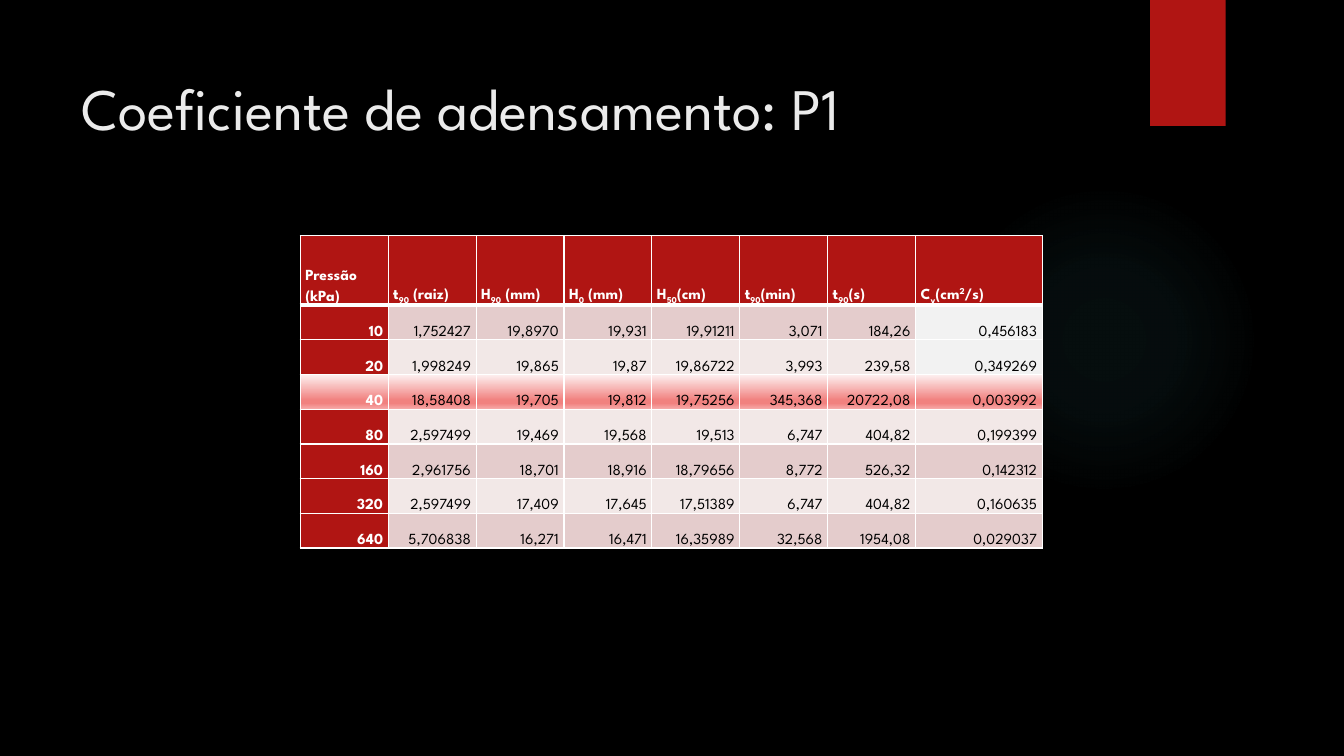
import dataclasses

import lxml.etree
import pptx
import pptx.dml.color
import pptx.enum.shapes
import pptx.enum.text
import pptx.oxml
import pptx.oxml.ns
import pptx.util

Pt = pptx.util.Pt
qn = pptx.oxml.ns.qn
ALIGN = pptx.enum.text.PP_ALIGN
SHAPE = pptx.enum.shapes.MSO_SHAPE


@dataclasses.dataclass(frozen=True)
class Theme:
    font: str = "League Spartan"
    title_size: float = 42
    table_size: float = 11
    background: str = "000000"
    title: str = "EBEBEB"
    accent: str = "B01513"
    white: str = "FFFFFF"
    black: str = "000000"
    bands: tuple = ("E4CCCC", "F2E8E7")
    plain: str = "F2F2F2"
    # Gradient stops: position in %, colour, opacity in %
    glow: tuple = ((0, "50B9C1", 7), (36, "50B9C1", 6), (69, "50B9C1", 0))
    highlight: tuple = ((0, "FDF1F1", 100), (74, "F1817F", 100),
                        (83, "F1817F", 100), (100, "F6ABAA", 100))


SUB, SUP = -25, 30
HEADERS = [
    [("Pressão (kPa)", 0)],
    [("t", 0), ("90", SUB), (" (raiz)", 0)],
    [("H", 0), ("90", SUB), (" (mm)", 0)],
    [("H", 0), ("0", SUB), (" (mm)", 0)],
    [("H", 0), ("50", SUB), ("(cm)", 0)],
    [("t", 0), ("90", SUB), ("(min)", 0)],
    [("t", 0), ("90", SUB), ("(s)", 0)],
    [("C", 0), ("v", SUB), ("(cm", 0), ("2", SUP), ("/s)", 0)],
]
READINGS = [
    ["10", "1,752427", "19,8970", "19,931", "19,91211", "3,071", "184,26", "0,456183"],
    ["20", "1,998249", "19,865", "19,87", "19,86722", "3,993", "239,58", "0,349269"],
    ["40", "18,58408", "19,705", "19,812", "19,75256", "345,368", "20722,08", "0,003992"],
    ["80", "2,597499", "19,469", "19,568", "19,513", "6,747", "404,82", "0,199399"],
    ["160", "2,961756", "18,701", "18,916", "18,79656", "8,772", "526,32", "0,142312"],
    ["320", "2,597499", "17,409", "17,645", "17,51389", "6,747", "404,82", "0,160635"],
    ["640", "5,706838", "16,271", "16,471", "16,35989", "32,568", "1954,08", "0,029037"],
]
HIGHLIGHT_ROW = 3
PLAIN_ROWS = (1, 2)


def rgb(color):
    return pptx.dml.color.RGBColor.from_string(color)


def write(tf, parts, *, font, size, color, bold=False, align=ALIGN.LEFT, spacing=1.0):
    """Fill the first paragraph with (text, baseline shift in %) parts."""
    p = tf.paragraphs[0]
    p.alignment = align
    p.line_spacing = spacing
    for text, shift in parts:
        r = p.add_run()
        r.text = text
        r.font.name = font
        r.font.size = Pt(size)
        r.font.bold = bold
        r.font.color.rgb = rgb(color)
        if shift:
            r.font._element.set("baseline", str(shift * 1000))


def set_gradient(fill, parent, stops, radial=False):
    """Give the element that owns the fill a radial or a downward gradient."""
    fill.gradient()
    grad = parent.find(qn("a:gradFill"))
    for child in list(grad):
        grad.remove(child)
    stop_list = lxml.etree.SubElement(grad, qn("a:gsLst"))
    for position, color, opacity in stops:
        gs = lxml.etree.SubElement(stop_list, qn("a:gs"), pos=str(position * 1000))
        clr = lxml.etree.SubElement(gs, qn("a:srgbClr"), val=color)
        if opacity < 100:
            lxml.etree.SubElement(clr, qn("a:alpha"), val=str(opacity * 1000))
    if radial:
        shade = lxml.etree.SubElement(grad, qn("a:path"), path="circle")
        lxml.etree.SubElement(shade, qn("a:fillToRect"),
                              {side: "50000" for side in "ltrb"})
    else:
        lxml.etree.SubElement(grad, qn("a:lin"), ang="5400000", scaled="0")


def set_borders(cell, color, widths):
    tc_pr = cell._tc.get_or_add_tcPr()
    for side in "LRTB":
        ln = lxml.etree.SubElement(tc_pr, qn(f"a:ln{side}"), w=str(Pt(widths.get(side, 1))))
        solid = lxml.etree.SubElement(ln, qn("a:solidFill"))
        lxml.etree.SubElement(solid, qn("a:srgbClr"), val=color)


class Deck:
    def __init__(self, theme):
        self.theme = theme
        self.prs = pptx.Presentation()
        self.prs.slide_width, self.prs.slide_height = Pt(960), Pt(540)
        self.s = self.prs.slides.add_slide(self.prs.slide_layouts[6])
        self.s.background.fill.solid()
        self.s.background.fill.fore_color.rgb = rgb(theme.background)

    def shape(self, kind, left, top, width, height):
        sp = self.s.shapes.add_shape(kind, Pt(left), Pt(top), Pt(width), Pt(height))
        sp.shadow.inherit = False
        sp.line.fill.background()
        return sp

    def glow(self, left, top, size):
        sp = self.shape(SHAPE.OVAL, left, top, size, size)
        set_gradient(sp.fill, sp._element.spPr, self.theme.glow, radial=True)

    def ribbon(self, left, top, width, height):
        sp = self.shape(SHAPE.RECTANGLE, left, top, width, height)
        sp.fill.solid()
        sp.fill.fore_color.rgb = rgb(self.theme.accent)
        effects = sp._element.spPr.find(qn("a:effectLst"))
        shadow = lxml.etree.SubElement(
            effects, qn("a:outerShdw"), blurRad=str(Pt(3)), dist=str(Pt(2)),
            dir="5400000", rotWithShape="0")
        clr = lxml.etree.SubElement(shadow, qn("a:srgbClr"), val=self.theme.black)
        lxml.etree.SubElement(clr, qn("a:alpha"), val="45000")

    def title(self, text, left, top, width, height):
        tf = self.s.shapes.add_textbox(Pt(left), Pt(top), Pt(width), Pt(height)).text_frame
        tf.word_wrap = True
        tf.margin_top = Pt(15.5)
        write(tf, [(text, 0)], font=self.theme.font, size=self.theme.title_size,
              color=self.theme.title)

    def table(self, rows, left, top, col_widths, row_heights):
        table = self.s.shapes.add_table(
            len(rows), len(col_widths), Pt(left), Pt(top),
            Pt(sum(col_widths)), Pt(sum(row_heights))).table
        table.first_row = table.horz_banding = False
        for column, width in zip(table.columns, col_widths):
            column.width = Pt(width)
        for row, height in zip(table.rows, row_heights):
            row.height = Pt(height)
        for i, row in enumerate(rows):
            for j, parts in enumerate(row):
                self.cell(table.cell(i, j), parts, i, j, j == len(row) - 1)

    def cell(self, cell, parts, i, j, last):
        th = self.theme
        heading = i == 0 or j == 0
        cell.vertical_anchor = pptx.enum.text.MSO_ANCHOR.BOTTOM
        cell.margin_left = cell.margin_right = Pt(3.6)
        cell.margin_top = cell.margin_bottom = 0
        set_borders(cell, th.white, {0: {"B": 3}, 1: {"T": 3}}.get(i, {}))
        if i == HIGHLIGHT_ROW:
            set_gradient(cell.fill, cell._tc.tcPr, th.highlight)
        else:
            cell.fill.solid()
            color = th.accent if heading else th.bands[(i - 1) % 2]
            if last and i in PLAIN_ROWS:
                color = th.plain
            cell.fill.fore_color.rgb = rgb(color)
        write(cell.text_frame, parts, font=th.font, size=th.table_size,
              color=th.white if heading else th.black, bold=heading,
              align=ALIGN.RIGHT if i else ALIGN.LEFT, spacing=1.5)


def main():
    deck = Deck(Theme())
    deck.glow(677.5, 131.75, 221.75)
    deck.ribbon(821.5, 0, 54, 90)
    deck.title("Coeficiente de adensamento: P1", 51, 36, 741, 110)
    rows = [HEADERS] + [[[(value, 0)] for value in row] for row in READINGS]
    deck.table(rows, 214.5, 168.5, [62.8] * 7 + [90.4], [49.5] + [24.8] * 7)
    deck.prs.save("out.pptx")


if __name__ == "__main__":
    main()
